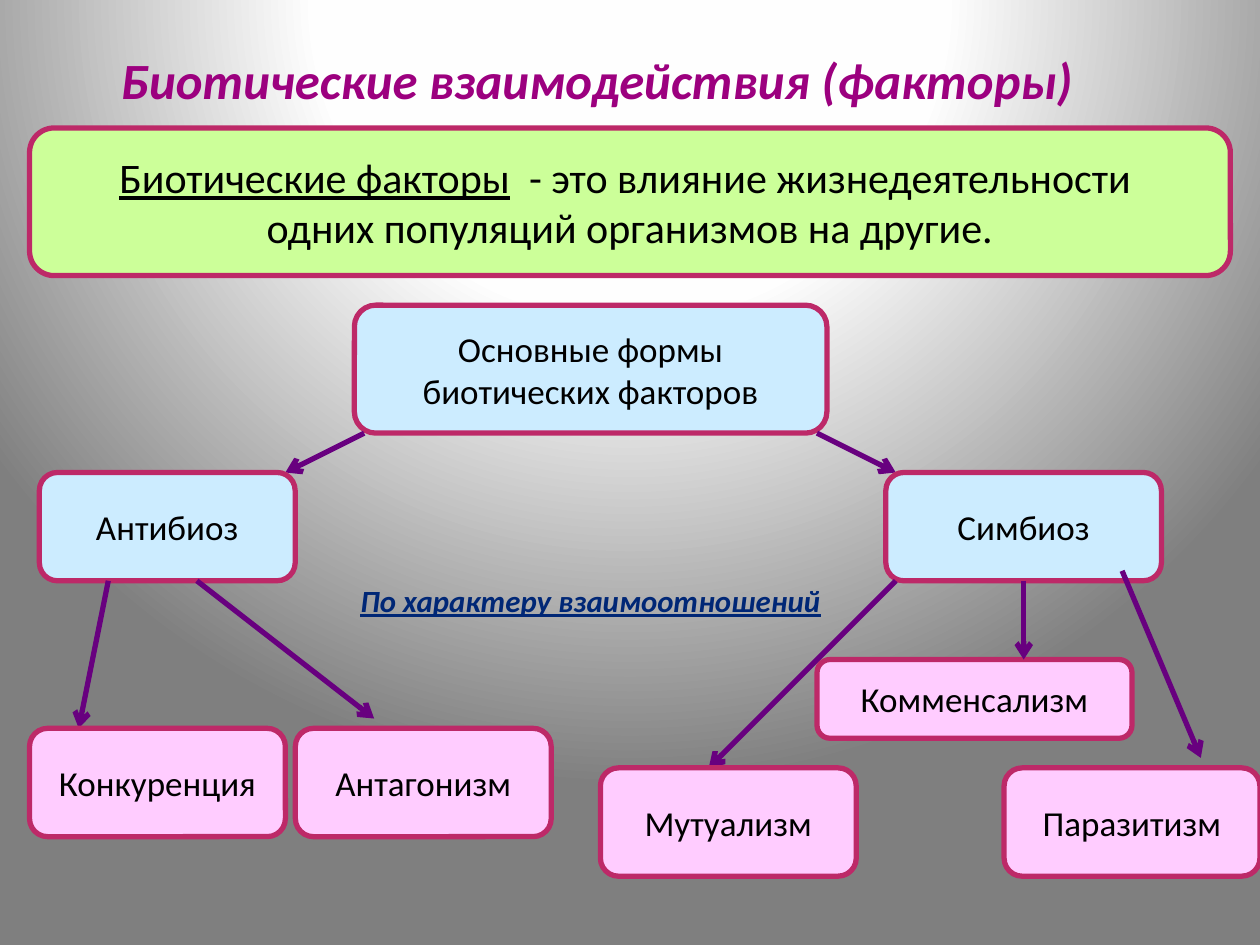
from lxml.etree import SubElement
from pptx import Presentation
from pptx.dml.color import RGBColor
from pptx.enum.shapes import MSO_CONNECTOR as CONNECTOR, MSO_SHAPE as SHAPE
from pptx.enum.text import MSO_ANCHOR as ANCHOR, PP_ALIGN as ALIGN
from pptx.oxml import parse_xml
from pptx.oxml.ns import nsdecls, qn
from pptx.util import Pt

FONT = "Calibri"
GREEN, BLUE, PINK = "CCFF99", "CCECFF", "FFCCFF"
BORDER, ARROW, BLACK = "BD2968", "68007F", "000000"
TITLE_COLOR, CAPTION_COLOR = "9C007F", "002776"

TITLE = "Биотические взаимодействия (факторы)"
TERM = "Биотические факторы"
DEFINITION = ["  - это влияние жизнедеятельности ", "одних популяций организмов на другие."]
CAPTION = "По характеру взаимоотношений"

# Boxes: text, left, top, width, height
ROOT = ("Основные формы биотических факторов", 202.5, 174.4, 270, 73.1)
BRANCHES = [
    ("Антибиоз", 22.5, 270, 146.2, 61.9),
    ("Симбиоз", 506.2, 270, 157.5, 61.9),
]
KINDS = [
    ("Конкуренция", 16.9, 416.2, 146.2, 61.9),
    ("Антагонизм", 168.8, 416.2, 146.2, 61.9),
    ("Мутуализм", 343.1, 438.8, 146.2, 61.9),
    ("Комменсализм", 466.9, 376.9, 180, 45),
    ("Паразитизм", 573.8, 438.8, 146.2, 61.9),
]

# Arrows: start x, start y, end x, end y
ROOT_ARROWS = [(208.1, 247.5, 163.1, 270), (466.9, 247.5, 511.9, 270)]
KIND_ARROWS = [
    (61.9, 331.9, 45, 416.2),
    (112.5, 331.9, 213.8, 410.6),
    (641.2, 326.2, 686.2, 433.1),
    (511.9, 331.9, 405, 438.8),
]
FRONT_ARROW = (585, 331.9, 585, 376.9)

BACKGROUND_STOPS = [(0, "FFFFFF"), (40, "FEFEFE"), (100, "7F7F7F")]


def color(value):
    return RGBColor.from_string(value)


def set_background(slide):
    """Fill the slide with a round gradient centred above its top edge."""
    slide.background.fill.gradient()
    old = slide.element.find(".//" + qn("a:gradFill"))
    stops = "".join(
        f'<a:gs pos="{position * 1000}"><a:srgbClr val="{value}"/></a:gs>'
        for position, value in BACKGROUND_STOPS
    )
    gradient = parse_xml(
        f'<a:gradFill {nsdecls("a")} rotWithShape="1"><a:gsLst>{stops}</a:gsLst>'
        '<a:path path="circle"><a:fillToRect l="50000" t="-80000" r="50000" b="180000"/>'
        "</a:path></a:gradFill>"
    )
    old.getparent().replace(old, gradient)


def format_paragraph(paragraph, size, value=BLACK, align=ALIGN.CENTER, emphasis=False):
    paragraph.alignment = align
    font = paragraph.font
    font.name, font.size = FONT, Pt(size)
    font.bold = font.italic = emphasis
    font.color.rgb = color(value)


def add_box(slide, text, left, top, width, height, fill, size=20):
    shape = slide.shapes.add_shape(
        SHAPE.ROUNDED_RECTANGLE, Pt(left), Pt(top), Pt(width), Pt(height)
    )
    shape.shadow.inherit = False
    shape.fill.solid()
    shape.fill.fore_color.rgb = color(fill)
    shape.line.color.rgb = color(BORDER)
    shape.line.width = Pt(3)
    frame = shape.text_frame
    frame.word_wrap = True
    frame.vertical_anchor = ANCHOR.MIDDLE
    frame.text = text
    for paragraph in frame.paragraphs:
        format_paragraph(paragraph, size)
    return shape


def add_arrow(slide, *ends):
    connector = slide.shapes.add_connector(CONNECTOR.STRAIGHT, *map(Pt, ends))
    connector.line.color.rgb = color(ARROW)
    connector.line.width = Pt(3)
    SubElement(connector.line._get_or_add_ln(), qn("a:tailEnd"), type="arrow")
    SubElement(connector.element.spPr, qn("a:effectLst"))


def add_title(slide):
    title = slide.shapes.title
    title.left, title.top, title.width, title.height = map(Pt, (61.9, 11.5, 607.7, 67.7))
    title.text_frame.text = TITLE
    title.text_frame.vertical_anchor = ANCHOR.MIDDLE
    format_paragraph(title.text_frame.paragraphs[0], 29, TITLE_COLOR, ALIGN.LEFT, True)


def add_definition(slide):
    box = add_box(slide, "\n".join(DEFINITION), 16.9, 73.1, 686.2, 84.4, GREEN, 24)
    first = box.text_frame.paragraphs[0]
    first.runs[0].text = TERM
    first.runs[0].font.underline = True
    first.add_run().text = DEFINITION[0]


def add_caption(slide):
    box = slide.shapes.add_textbox(Pt(174.4), Pt(320.6), Pt(326.2), Pt(45))
    frame = box.text_frame
    frame.word_wrap = True
    frame.vertical_anchor = ANCHOR.MIDDLE
    frame.text = CAPTION
    paragraph = frame.paragraphs[0]
    format_paragraph(paragraph, 17.6, CAPTION_COLOR, emphasis=True)
    paragraph.font.underline = True


def main():
    presentation = Presentation()
    presentation.slide_width, presentation.slide_height = Pt(720), Pt(540)
    slide = presentation.slides.add_slide(presentation.slide_layouts[5])
    set_background(slide)
    add_title(slide)
    add_definition(slide)

    add_box(slide, *ROOT, BLUE)
    for arrow in ROOT_ARROWS:
        add_arrow(slide, *arrow)
    for branch in BRANCHES:
        add_box(slide, *branch, BLUE)
    add_caption(slide)
    for arrow in KIND_ARROWS:
        add_arrow(slide, *arrow)
    for kind in KINDS:
        add_box(slide, *kind, PINK)
    add_arrow(slide, *FRONT_ARROW)

    presentation.save("out.pptx")


if __name__ == "__main__":
    main()
